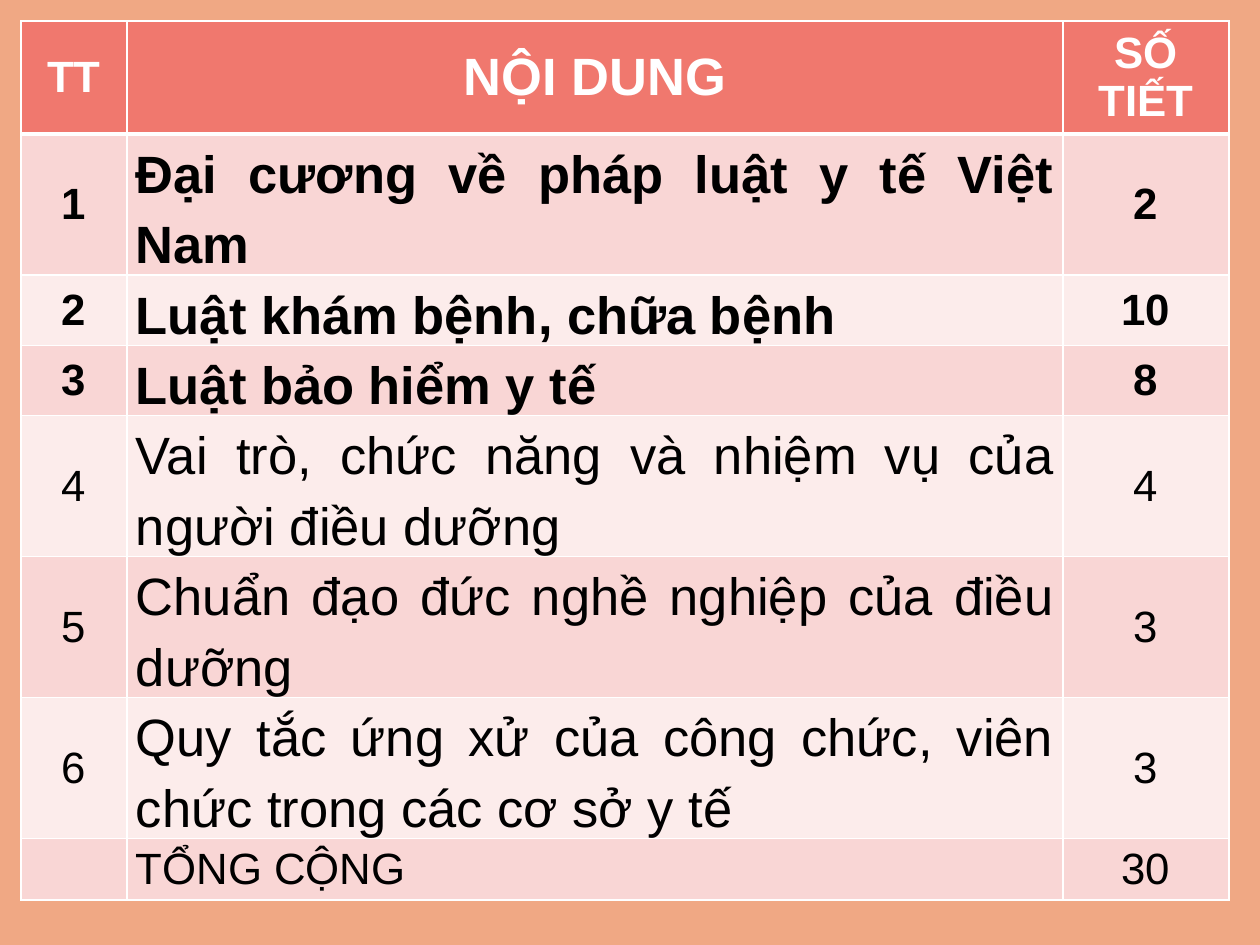
from lxml import etree
from pptx import Presentation
from pptx import util as u
from pptx.dml.color import RGBColor
from pptx.enum import text
from pptx.oxml import ns

PX = 914400 / 126
SAND = RGBColor(0xF0, 0xA8, 0x84)
CORAL = RGBColor(0xF0, 0x78, 0x6E)
PINK = RGBColor(0xF9, 0xD6, 0xD5)
PALE = RGBColor(0xFC, 0xEC, 0xEB)
WHITE = RGBColor(0xFF, 0xFF, 0xFF)
BLACK = RGBColor(0, 0, 0)

COLS = [106, 936, 166]
ROWS = [113, 141, 70, 70, 141, 141, 141, 61]
DATA = [
    ("TT", "NỘI DUNG", "SỐ TIẾT"),
    ("1", "Đại cương về pháp luật y tế Việt Nam", "2"),
    ("2", "Luật khám bệnh, chữa bệnh", "10"),
    ("3", "Luật bảo hiểm y tế", "8"),
    ("4", "Vai trò, chức năng và nhiệm vụ của người điều dưỡng", "4"),
    ("5", "Chuẩn đạo đức nghề nghiệp của điều dưỡng", "3"),
    ("6", "Quy tắc ứng xử của công chức, viên chức trong các cơ sở y tế", "3"),
    ("", "TỔNG CỘNG", "30"),
]


def px(n):
    """Turn px into EMU."""
    return u.Emu(round(n * PX))


def apply(item, vals):
    """Set each attribute named in a dict."""
    for name, val in vals.items():
        setattr(item, name, val)


def edge(cell, side, width):
    """Draw one white border of a cell."""
    props = cell._tc.get_or_add_tcPr()
    line = etree.SubElement(props, ns.qn("a:ln" + side), w=str(u.Pt(width)))
    fill = etree.SubElement(line, ns.qn("a:solidFill"))
    etree.SubElement(fill, ns.qn("a:srgbClr"), val=str(WHITE))


def style(cell, row, col):
    """Fill, border and format a cell by its row and column."""
    head, last = row == 0, row == len(DATA) - 1
    topic = col == 1 and not head
    for side in "LRTB":
        thick = (row, side) in ((0, "B"), (1, "T"))
        edge(cell, side, 3 if thick else 1)
    cell.fill.solid()
    cell.fill.fore_color.rgb = CORAL if head else PINK if row % 2 else PALE
    cell.vertical_anchor = text.MSO_ANCHOR.MIDDLE
    if topic:
        apply(cell, {"margin_left": px(9), "margin_right": px(9),
                     "margin_top": 0, "margin_bottom": 0})
    cell.text = DATA[row][col]
    para = cell.text_frame.paragraphs[0]
    para.alignment = text.PP_ALIGN.JUSTIFY if topic else text.PP_ALIGN.CENTER
    if topic and not last:
        para.line_spacing = 1.2
    for run in para.runs:
        apply(run.font, {"name": "Arial", "bold": row < 4,
                         "size": u.Pt(30 if col == 1 and not last else 25)})
        run.font.color.rgb = WHITE if head else BLACK


def grid(slide, left, top):
    """Place the course table with its corner at the given point."""
    frame = slide.shapes.add_table(len(ROWS), len(COLS), px(left), px(top),
                                   px(sum(COLS)), px(sum(ROWS)))
    table = frame.table
    for col, width in zip(table.columns, COLS):
        col.width = px(width)
    for row, height in zip(table.rows, ROWS):
        row.height = px(height)
    for row in range(len(ROWS)):
        for col in range(len(COLS)):
            style(table.cell(row, col), row, col)


def main():
    """Build and save the slide."""
    deck = Presentation()
    apply(deck, {"slide_width": px(1260), "slide_height": px(945)})
    slide = deck.slides.add_slide(deck.slide_layouts[6])
    slide.background.fill.solid()
    slide.background.fill.fore_color.rgb = SAND
    grid(slide, 21, 21)
    deck.save("out.pptx")


if __name__ == "__main__":
    main()
